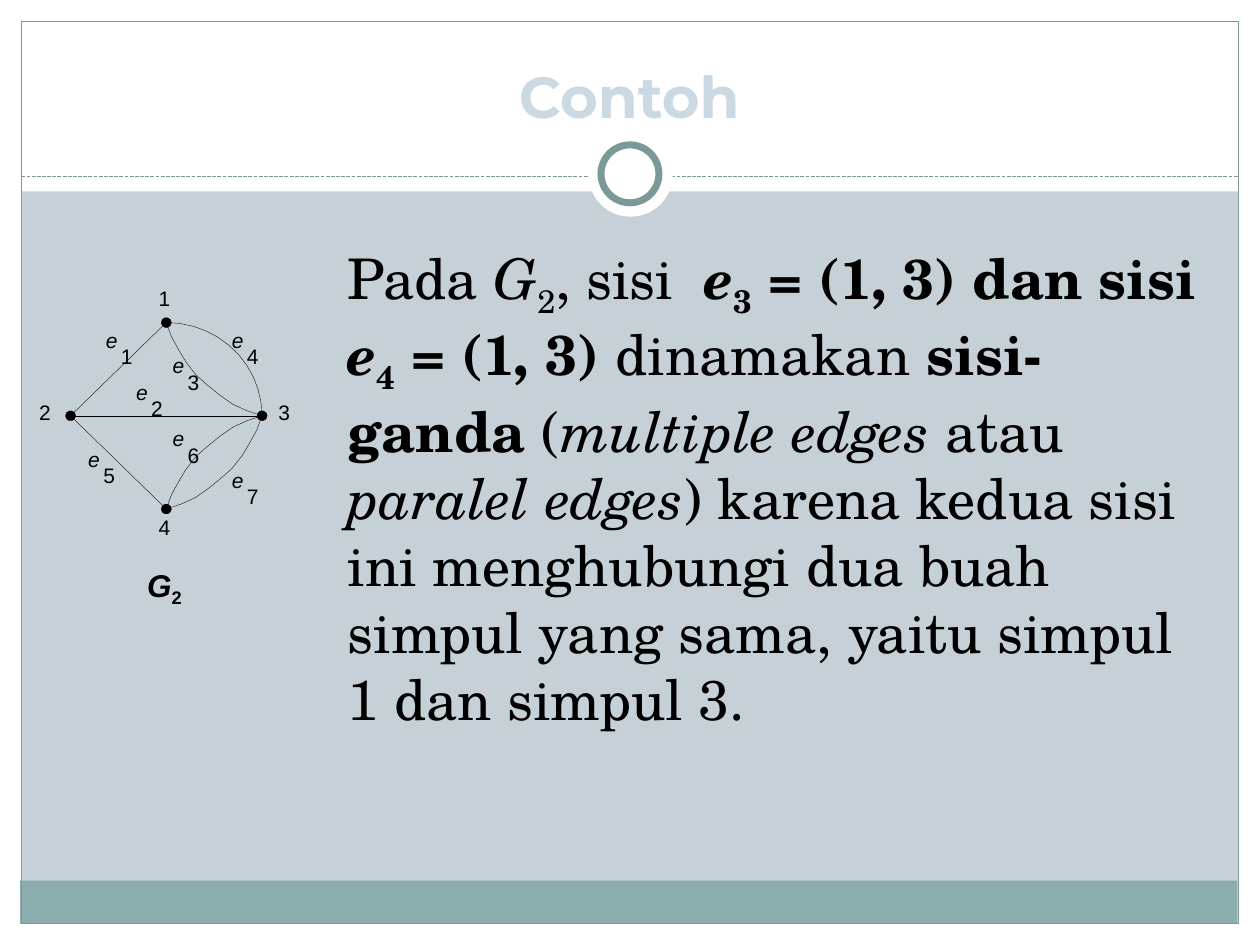
import math
from dataclasses import dataclass
from typing import Optional, Union

import pptx
import pptx.dml.color
import pptx.enum.dml
import pptx.enum.shapes
import pptx.enum.text
import pptx.oxml
import pptx.oxml.ns
import pptx.shapes.autoshape
import pptx.shapes.connector
import pptx.shapes.shapetree
import pptx.util

RGBColor = pptx.dml.color.RGBColor
Shapes = Union[pptx.shapes.shapetree.SlideShapes, pptx.shapes.shapetree.GroupShapes]
Kind = pptx.enum.shapes.MSO_SHAPE
Point = tuple[int, int]
Box = tuple[int, int, int, int]

EMU_PER_PX = 9144  # 100 px to the inch
WIDTH, HEIGHT = 1000, 750

BACKGROUND = RGBColor(0xC5, 0xD1, 0xD7)
WHITE = RGBColor(0xFF, 0xFF, 0xFF)
BLACK = RGBColor(0x00, 0x00, 0x00)
FOOTER = RGBColor(0x8C, 0xAD, 0xAE)
FRAME = RGBColor(0x7C, 0x99, 0x9A)
TITLE = RGBColor(0xCB, 0xDA, 0xE2)

EDGE_WIDTH = 0.2


@dataclass(frozen=True)
class Panel:
    box: Box
    fill: Optional[RGBColor] = WHITE
    line_width: float = 0
    kind: Kind = Kind.RECTANGLE


@dataclass(frozen=True)
class Run:
    text: str
    bold: bool = False
    italic: bool = False
    subscript: bool = False


@dataclass(frozen=True)
class Style:
    font: str
    size: int
    color: RGBColor = BLACK


@dataclass(frozen=True)
class Vertex:
    name: str
    center: Point
    label: Point


PANELS = [
    Panel((0, 733, WIDTH, 17)),
    Panel((0, 0, WIDTH, 152)),
    Panel((0, 0, 17, HEIGHT)),
    Panel((983, 0, 17, HEIGHT)),
    Panel((16, 699, 966, 34), FOOTER),
    Panel((17, 17, 966, 716), None, 0.75),
]
RINGS = [
    Panel((467, 105, 67, 67), kind=Kind.OVAL),
    Panel((477, 115, 46, 46), line_width=4, kind=Kind.OVAL),
]

TOP = Vertex("1", (132, 256), (126, 227))
LEFT = Vertex("2", (56, 330), (31, 317))
RIGHT = Vertex("3", (208, 330), (221, 317))
BOTTOM = Vertex("4", (132, 404), (126, 408))
VERTICES = [LEFT, BOTTOM, TOP, RIGHT]
STRAIGHT_EDGES = [(LEFT, BOTTOM), (TOP, LEFT), (LEFT, RIGHT)]

# e3 sags below the chord; e6 and e7 are its reflections.
E3 = [(132, 256), (136, 267), (142, 278), (148, 288), (156, 298),
      (165, 306), (175, 314), (185, 321), (196, 326), (208, 330)]
E4 = [(132 + 76 * math.sin(step * math.pi / 22), 330 - 74 * math.cos(step * math.pi / 22))
      for step in range(12)]
E6 = [(x, 660 - y) for x, y in E3]
E7 = [(340 - x, y + 74) for x, y in E3]
CURVED_EDGES = [E3, E6, E4, E7]

EDGE_LABELS = [(84, 260), (108, 301), (137, 280), (184, 260), (70, 354), (137, 338), (184, 371)]

LABEL = Style("Arial", 12)
CAPTION = Style("Arial", 18)
BODY = Style("TeX Gyre Schola", 32)
HEADING = Style("Montserrat", 33, TITLE)

BODY_RUNS = [
    Run("Pada "),
    Run("G", italic=True),
    Run("2", subscript=True),
    Run(", sisi  "),
    Run("e", bold=True, italic=True),
    Run("3", bold=True, subscript=True),
    Run(" = (1, 3) dan sisi ", bold=True),
    Run("e", bold=True, italic=True),
    Run("4", bold=True, subscript=True),
    Run(" = (1, 3) ", bold=True),
    Run("dinamakan "),
    Run("sisi-ganda", bold=True),
    Run(" ("),
    Run("multiple edges ", italic=True),
    Run("atau "),
    Run("paralel edges", italic=True),
    Run(") karena kedua sisi ini menghubungi dua buah simpul yang sama, "
        "yaitu simpul 1 dan simpul 3."),
]


def px(value: float) -> int:
    return pptx.util.Emu(round(value * EMU_PER_PX))


def add_panel(shapes: Shapes, panel: Panel) -> None:
    shape = shapes.add_shape(panel.kind, *map(px, panel.box))
    shape.shadow.inherit = False
    if panel.fill is None:
        shape.fill.background()
    else:
        shape.fill.solid()
        shape.fill.fore_color.rgb = panel.fill
    if panel.line_width:
        shape.line.color.rgb = FRAME
        shape.line.width = pptx.util.Pt(panel.line_width)
    else:
        shape.line.fill.background()


def add_line(shapes: Shapes, start: Point, end: Point, color: RGBColor,
             width: float) -> pptx.shapes.connector.Connector:
    line = shapes.add_connector(pptx.enum.shapes.MSO_CONNECTOR.STRAIGHT,
                                *map(px, start + end))
    line.line.color.rgb = color
    line.line.width = pptx.util.Pt(width)
    properties = line._element.spPr
    properties.append(pptx.oxml.parse_xml(
        f"<a:effectLst {pptx.oxml.ns.nsdecls('a')}/>"))
    return line


def add_outline(shapes: Shapes, points: list[tuple[float, float]], closed: bool) -> None:
    """Draw a black polyline, filled when closed."""
    corners = [(px(x), px(y)) for x, y in points]
    builder = shapes.build_freeform(*corners[0])
    builder.add_line_segments(corners[1:], close=closed)
    shape = builder.convert_to_shape()
    shape.shadow.inherit = False
    if closed:
        shape.fill.solid()
        shape.fill.fore_color.rgb = BLACK
    else:
        shape.fill.background()
    shape.line.color.rgb = BLACK
    shape.line.width = pptx.util.Pt(EDGE_WIDTH)


def add_text(shapes: Shapes, box: Box, runs: list[Run], style: Style, wrap: bool = True,
             inset: bool = True) -> pptx.shapes.autoshape.Shape:
    shape = shapes.add_textbox(*map(px, box))
    frame = shape.text_frame
    frame.word_wrap = wrap
    if not inset:
        frame.margin_left = frame.margin_top = frame.margin_right = frame.margin_bottom = 0
    for item in runs:
        run = frame.paragraphs[0].add_run()
        run.text = item.text
        run.font.name = style.font
        run.font.size = pptx.util.Pt(style.size)
        run.font.color.rgb = style.color
        run.font.bold = item.bold
        run.font.italic = item.italic
        if item.subscript:
            run._r.get_or_add_rPr().set("baseline", "-25000")
    return shape


def add_graph(shapes: Shapes) -> None:
    for vertex in VERTICES:
        x, y = vertex.center
        angles = [step * math.pi / 5 for step in range(10)]
        add_outline(shapes, [(x + 4 * math.cos(a), y + 4 * math.sin(a)) for a in angles], True)
    for curve in CURVED_EDGES:
        add_outline(shapes, curve, False)
    for start, end in STRAIGHT_EDGES:
        add_line(shapes, start.center, end.center, BLACK, EDGE_WIDTH)
    for vertex in VERTICES:
        add_text(shapes, (*vertex.label, 21, 30), [Run(vertex.name)], LABEL, inset=False)
    for number, (x, y) in enumerate(EDGE_LABELS, start=1):
        add_text(shapes, (x, y, 21, 31), [Run("e", italic=True)], LABEL, inset=False)
        add_text(shapes, (x + 12, y + 13, 14, 20), [Run(str(number))], LABEL, inset=False)


def main() -> None:
    presentation = pptx.Presentation()
    presentation.slide_width, presentation.slide_height = px(WIDTH), px(HEIGHT)
    slide = presentation.slides.add_slide(presentation.slide_layouts[6])
    slide.background.fill.solid()
    slide.background.fill.fore_color.rgb = BACKGROUND
    shapes = slide.shapes

    for panel in PANELS:
        add_panel(shapes, panel)
    divider = add_line(shapes, (17, 140), (983, 140), FRAME, 0.75)
    divider.line.dash_style = pptx.enum.dml.MSO_LINE.SQUARE_DOT
    for ring in RINGS:
        add_panel(shapes, ring)

    add_graph(shapes.add_group_shape().shapes)
    add_text(shapes, (266, 188, 695, 352), BODY_RUNS, BODY)
    caption = [Run("G", bold=True, italic=True), Run("2", bold=True, subscript=True)]
    add_text(shapes, (107, 444, 49, 40), caption, CAPTION, wrap=False)
    title = add_text(shapes, (33, 25, 933, 83), [Run("Contoh", bold=True)], HEADING)
    title.text_frame.vertical_anchor = pptx.enum.text.MSO_ANCHOR.BOTTOM
    title.text_frame.paragraphs[0].alignment = pptx.enum.text.PP_ALIGN.CENTER
    presentation.save("out.pptx")


if __name__ == "__main__":
    main()
